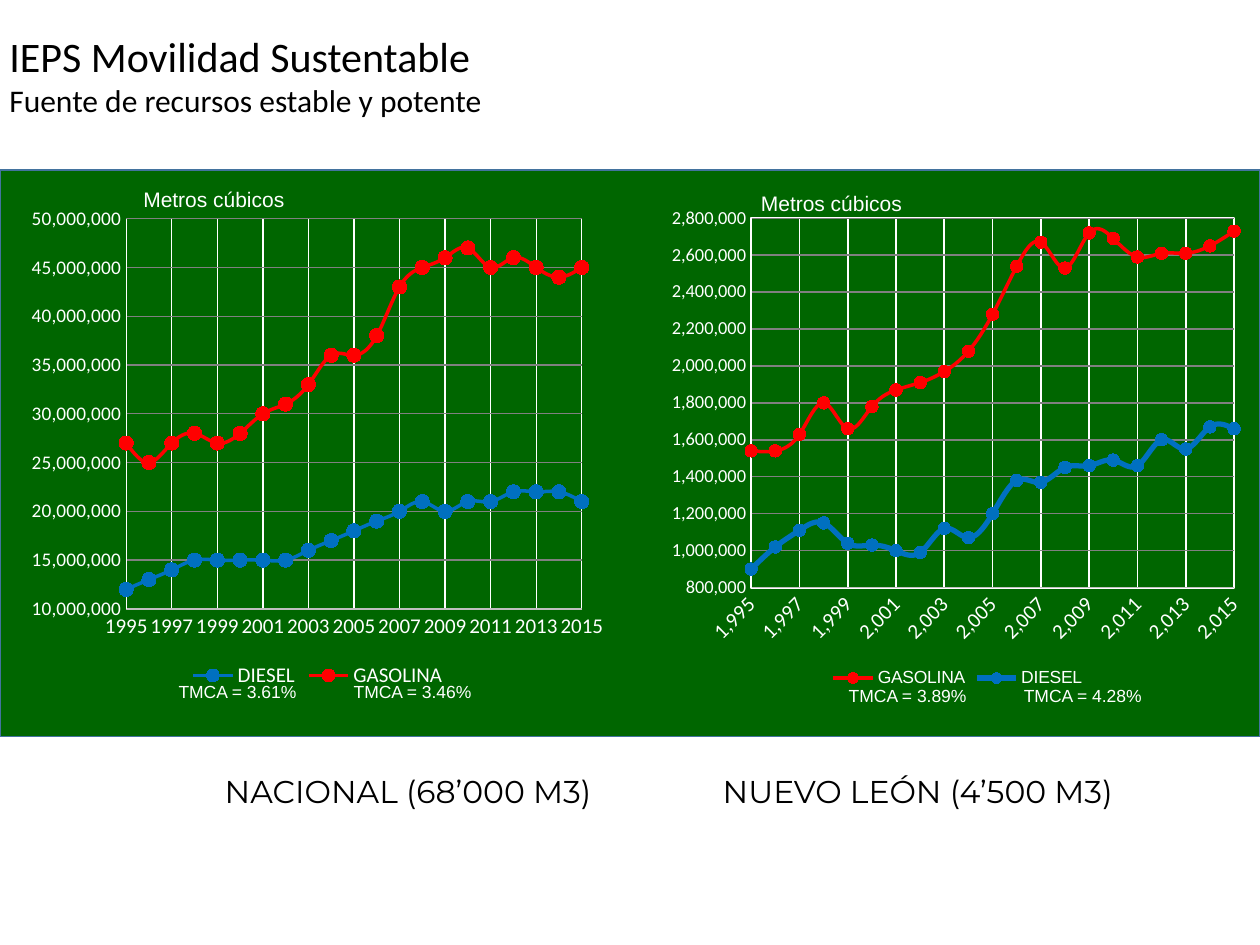
from lxml import etree
from pptx import Presentation
from pptx.chart.data import XyChartData
from pptx.dml.color import RGBColor
from pptx.enum.chart import XL_CHART_TYPE, XL_LEGEND_POSITION, XL_MARKER_STYLE, XL_TICK_MARK
from pptx.enum.shapes import MSO_SHAPE
from pptx.oxml import parse_xml
from pptx.oxml.ns import nsdecls, qn
from pptx.util import Cm, Pt

SCATTER = XL_CHART_TYPE.XY_SCATTER_SMOOTH
BOTTOM = XL_LEGEND_POSITION.BOTTOM
CIRCLE = XL_MARKER_STYLE.CIRCLE
NO_TICK = XL_TICK_MARK.NONE
RECTANGLE = MSO_SHAPE.RECTANGLE
WHITE, BLACK, GREEN = "FFFFFF", "000000", "006600"
RED, BLUE, GRAY, SILVER = "FF0000", "0070C0", "808080", "BFBFBF"
YEARS = range(1995, 2016)


def color(hex_value):
    return RGBColor.from_string(hex_value)


def set_font(font, name, size, hex_value):
    font.name, font.size = name, Pt(size)
    font.color.rgb = color(hex_value)


presentation = Presentation()
presentation.slide_width, presentation.slide_height = Cm(25.4), Cm(19.05)
slide = presentation.slides.add_slide(presentation.slide_layouts[6])

panel = slide.shapes.add_shape(RECTANGLE, Cm(0), Cm(3.43), Cm(25.4), Cm(11.42))
panel.shadow.inherit = False
panel.fill.solid()
panel.fill.fore_color.rgb = color(GREEN)
panel.line.color.rgb = color("43739E")
panel.line.width = Pt(1)

# Series values are multiples of the chart's unit, in cubic metres
charts = [
    {
        "left": 0.41, "layout": (0.178, 0.045, 0.766, 0.786), "frame": False,
        "value_range": (10_000_000, 50_000_000, 5_000_000), "year_format": "General",
        "rotation": 0, "value_size": 11, "grid_width": 0.75,
        "legend": ("Calibri", 12), "marker": 8, "unit": 1_000_000,
        "series": [
            ("DIESEL", BLUE, 2, [12, 13, 14, 15, 15, 15, 15, 15, 16, 17, 18, 19, 20, 21, 20,
                                 21, 21, 22, 22, 22, 21]),
            ("GASOLINA", RED, 2, [27, 25, 27, 28, 27, 28, 30, 31, 33, 36, 36, 38, 43, 45, 46,
                                  47, 45, 46, 45, 44, 45]),
        ],
    },
    {
        "left": 13.31, "layout": (0.153, 0.044, 0.812, 0.744), "frame": True,
        "value_range": (800_000, 2_800_000, 200_000), "year_format": "#,##0",
        "rotation": -45, "value_size": 10.5, "grid_width": 1,
        "legend": ("Arial", 10), "marker": 7, "unit": 10_000,
        "series": [
            ("GASOLINA", RED, 2, [154, 154, 163, 180, 166, 178, 187, 191, 197, 208, 228, 254,
                                  267, 253, 272, 269, 259, 261, 261, 265, 273]),
            ("DIESEL", BLUE, 3, [90, 102, 111, 115, 104, 103, 100, 99, 112, 107, 120, 138, 137,
                                 145, 146, 149, 146, 160, 155, 167, 166]),
        ],
    },
]

for item in charts:
    data = XyChartData()
    for name, _, _, multiples in item["series"]:
        series = data.add_series(name)
        for year, multiple in zip(YEARS, multiples):
            series.add_data_point(year, multiple * item["unit"])
    chart = slide.shapes.add_chart(
        SCATTER, Cm(item["left"]), Cm(3.96), Cm(11.99), Cm(10.01), data).chart
    set_font(chart.font, "Calibri", 10, BLACK)
    chart.has_title = False
    chart.has_legend = True
    chart.legend.position = BOTTOM
    chart.legend.include_in_layout = False
    set_font(chart.legend.font, *item["legend"], WHITE)
    plot = chart.plots[0]
    plot.vary_by_categories = False

    for series, (_, hue, width, _) in zip(plot.series, item["series"]):
        series._element.get_or_add_smooth().set("val", "1")
        series.format.line.color.rgb = color(hue)
        series.format.line.width = Pt(width)
        series.marker.style = CIRCLE
        series.marker.size = item["marker"]
        series.marker.format.fill.solid()
        series.marker.format.fill.fore_color.rgb = color(hue)
        series.marker.format.line.color.rgb = color(hue)

    axes = [
        (chart.category_axis, (1995, 2015, 2), item["year_format"], 12, SILVER, WHITE,
         item["grid_width"]),
        (chart.value_axis, item["value_range"], "#,##0", item["value_size"], WHITE, GRAY, 0.75),
    ]
    for axis, (low, high, step), number_format, size, line, grid, grid_width in axes:
        formats = {
            "minimum_scale": low, "maximum_scale": high, "major_unit": step,
            "major_tick_mark": NO_TICK, "minor_tick_mark": NO_TICK,
            "has_major_gridlines": True,
        }
        for attribute, value in formats.items():
            setattr(axis, attribute, value)
        axis.tick_labels.number_format = number_format
        axis.tick_labels.number_format_is_linked = False
        set_font(axis.tick_labels.font, "Calibri", size, WHITE)
        axis.format.line.color.rgb = color(line)
        axis.format.line.width = Pt(0.75)
        axis.major_gridlines.format.line.color.rgb = color(grid)
        axis.major_gridlines.format.line.width = Pt(grid_width)
    body = chart.category_axis._element.find(qn("c:txPr")).find(qn("a:bodyPr"))
    body.set("rot", str(item["rotation"] * 60000))

    plot_area = chart._chartSpace.chart.plotArea
    for old_layout in plot_area.findall(qn("c:layout")):
        plot_area.remove(old_layout)
    layout = parse_xml(f"<c:layout {nsdecls('c')}><c:manualLayout/></c:layout>")
    settings = [("layoutTarget", "inner"), ("xMode", "edge"), ("yMode", "edge")]
    settings += zip("xywh", item["layout"])
    for tag, value in settings:
        etree.SubElement(layout[0], qn(f"c:{tag}")).set("val", str(value))
    plot_area.insert(0, layout)
    if item["frame"]:
        plot_area.append(parse_xml(
            f'<c:spPr {nsdecls("c", "a")}><a:noFill/><a:ln w="12700"><a:solidFill>'
            f'<a:srgbClr val="{WHITE}"/></a:solidFill></a:ln></c:spPr>'))

# Place, tab stop, then text, font, size and colour of each paragraph
texts = [
    ((-0.06, 0.49, 18.42, 2.06), None,
     [("IEPS Movilidad Sustentable", "Calibri", 24, BLACK),
      ("Fuente de recursos estable y potente", "Calibri", 18, BLACK)]),
    ((3.35, 13.61, 6.7, 0.69), 3.53, [("TMCA = 3.61%\tTMCA = 3.46%", "Arial", 10, WHITE)]),
    ((2.64, 3.63, 3.6, 0.76), None, [("Metros cúbicos", "Arial", 12, WHITE)]),
    ((16.86, 13.69, 6.7, 0.69), 3.53, [("TMCA = 3.89%\tTMCA = 4.28%", "Arial", 10, WHITE)]),
    ((15.09, 3.71, 3.6, 0.76), None, [("Metros cúbicos", "Arial", 12, WHITE)]),
    ((4.28, 15.43, 20.96, 1.02), 10.04,
     [("NACIONAL (68’000 M3)\tNUEVO LEÓN (4’500 M3)", "Montserrat", 18, BLACK)]),
]
for place, tab_stop, lines in texts:
    frame = slide.shapes.add_textbox(*map(Cm, place)).text_frame
    frame.word_wrap = True
    for index, (text, *font) in enumerate(lines):
        paragraph = frame.add_paragraph() if index else frame.paragraphs[0]
        if tab_stop:
            tabs = etree.SubElement(paragraph._p.get_or_add_pPr(), qn("a:tabLst"))
            etree.SubElement(tabs, qn("a:tab"), pos=str(Cm(tab_stop)), algn="l")
        run = paragraph.add_run()
        run.text = text
        set_font(run.font, *font)

presentation.save("out.pptx")
